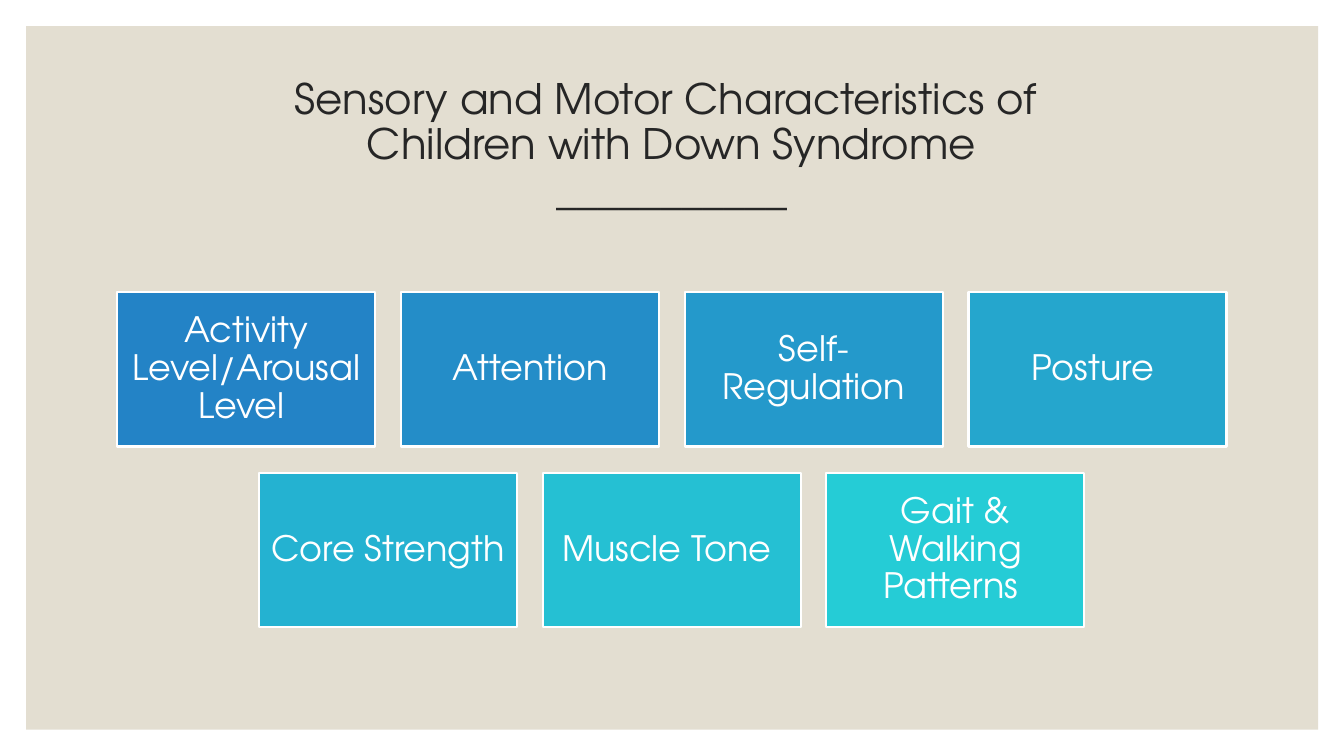
from copy import deepcopy
from dataclasses import dataclass

from pptx import Presentation
from pptx.dml.color import RGBColor
from pptx.enum.shapes import MSO_SHAPE
from pptx.enum.text import MSO_ANCHOR, MSO_AUTO_SIZE, PP_ALIGN
from pptx.oxml.ns import qn
from pptx.util import Emu, Pt

RECT = MSO_SHAPE.RECTANGLE
MIDDLE = MSO_ANCHOR.MIDDLE
CENTER = PP_ALIGN.CENTER
NO_FIT = MSO_AUTO_SIZE.NONE

SCALE = 4572  # 200 px to the inch
WIDE, HIGH = 2667, 1500
FACE = "TeX Gyre Adventor"
BOX_W, BOX_H, GAP = 512, 306, 51
ROW_TOP, ROW_STEP = 580, 358


@dataclass
class Trait:
    text: str
    fill: str


ROWS = [
    [
        Trait("Activity Level/Arousal Level ", "2383C6"),
        Trait("Attention", "248DC8"),
        Trait("Self-Regulation", "2499CB"),
        Trait("Posture ", "25A6CD"),
    ],
    [
        Trait("Core Strength", "24B2D1"),
        Trait("Muscle Tone ", "25C0D3"),
        Trait("Gait & Walking Patterns ", "25CCD6"),
    ],
]


def px(n: int) -> Emu:
    return Emu(n * SCALE)


def tint(code: str) -> RGBColor:
    return RGBColor.from_string(code)


def write(shape, text: str, *, size: int, color: str, inset: int) -> None:
    """Fill a shape with one centred paragraph; \v breaks a line."""
    frame = shape.text_frame
    frame.word_wrap = True
    frame.auto_size = NO_FIT
    frame.vertical_anchor = MIDDLE
    frame.margin_left = frame.margin_right = px(20)
    frame.margin_top = frame.margin_bottom = px(inset)
    para = frame.paragraphs[0]
    para.text = text
    para.alignment = CENTER
    para.line_spacing = 0.9
    para.space_before = Pt(0)
    for run in para.runs:
        run.font.name = FACE
        run.font.size = Pt(size)
        run.font.color.rgb = tint(color)
    # Line breaks take the format of the text around them
    for brk in para._p.findall(qn("a:br")):
        brk.append(deepcopy(para.runs[0]._r.rPr))


def block(slide, left: int, top: int, width: int, height: int,
          fill: str, line: str = ""):
    shape = slide.shapes.add_shape(RECT, px(left), px(top), px(width), px(height))
    shape.shadow.inherit = False
    shape.fill.solid()
    shape.fill.fore_color.rgb = tint(fill)
    if line:
        shape.line.color.rgb = tint(line)
        shape.line.width = Pt(1.5)
    else:
        shape.line.fill.background()
    return shape


def main() -> None:
    deck = Presentation()
    deck.slide_width, deck.slide_height = px(WIDE), px(HIGH)
    slide = deck.slides.add_slide(deck.slide_layouts[5])

    # Backdrop, placed behind the title
    panel = block(slide, 52, 52, 2564, 1396, "E3DED1")
    slide.shapes._spTree.insert(2, panel._element)

    # Title
    title = slide.shapes.title
    title.left, title.top = px(233), px(140)
    title.width, title.height = px(2200), px(300)
    write(title, "Sensory and Motor Characteristics of \v"
          "Children with Down Syndrome\v___________",
          size=30, color="262626", inset=10)

    # Rows of traits, each centred on the slide
    for r, row in enumerate(ROWS):
        span = len(row) * (BOX_W + GAP) - GAP
        start = (WIDE - span) // 2
        for c, trait in enumerate(row):
            box = block(slide, start + c * (BOX_W + GAP), ROW_TOP + r * ROW_STEP,
                        BOX_W, BOX_H, trait.fill, "FFFFFF")
            write(box, trait.text, size=25, color="FFFFFF", inset=20)

    deck.save("out.pptx")


if __name__ == "__main__":
    main()
